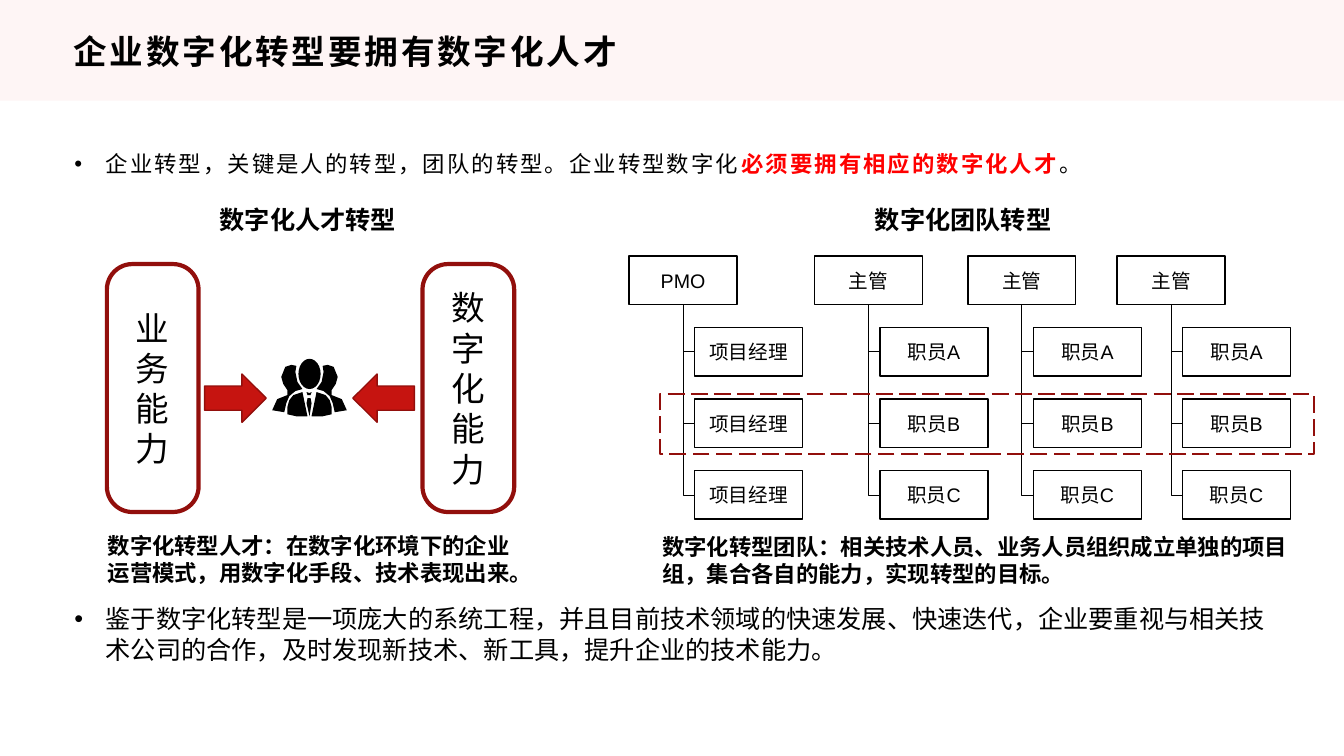
"""Builds a slide on the digital talent that a digital transformation needs."""
from pptx import Presentation
from pptx.dml.color import RGBColor
from pptx.enum.dml import MSO_LINE
from pptx.enum.shapes import MSO_CONNECTOR as Link, MSO_SHAPE as Kind
from pptx.enum.text import MSO_ANCHOR as Anchor, PP_ALIGN as Align
from pptx.oxml.ns import qn
from pptx.oxml.xmlchemy import OxmlElement as Element
from pptx.util import Inches, Pt

BLACK = RGBColor(0, 0, 0)
WHITE = RGBColor(255, 255, 255)
BLUSH = RGBColor(0xFE, 0xF5, 0xF5)
RED = RGBColor(0xFF, 0, 0)
CRIMSON = RGBColor(0xC6, 0x14, 0x10)
MAROON = RGBColor(0x92, 0x0F, 0x0C)


def add_box(kind, at, fill=None, line=None, width=1):
    box = slide.shapes.add_shape(kind, *map(Inches, at))
    box.shadow.inherit = False
    if fill is None:
        box.fill.background()
    else:
        box.fill.solid()
        box.fill.fore_color.rgb = fill
    if line is None:
        box.line.fill.background()
    else:
        box.line.color.rgb = line
        box.line.width = Pt(width)
    return box


def write(shape, parts, size, bold=None, align=Align.LEFT, bullet=False, gap=0):
    para = shape.text_frame.paragraphs[0]
    shape.text_frame.word_wrap = True
    para.alignment = align
    for part in parts:
        run = para.add_run()
        run.text = part
        if gap:
            run._r.get_or_add_rPr().set("spc", str(gap))
    if bullet:
        props = para._p.get_or_add_pPr()
        props.set("marL", str(Inches(0.31)))
        props.set("indent", str(Inches(-0.31)))
        for tag, key, value in (("a:buFont", "typeface", "Arial"), ("a:buChar", "char", "•")):
            mark = Element(tag)
            mark.set(key, value)
            props.append(mark)
    font = para.font
    font.name, font.size, font.bold = "Arial", Pt(size), bold
    font.color.rgb = BLACK
    return para


deck = Presentation()
deck.slide_width, deck.slide_height = Inches(13.33), Inches(7.5)
slide = deck.slides.add_slide(deck.slide_layouts[5])

title = slide.shapes.title
band = add_box(Kind.RECTANGLE, (0, 0, 13.33, 1), BLUSH)
title._element.addprevious(band._element)
title.left, title.top = Inches(0.63), Inches(0.27)
title.width, title.height = Inches(12.07), Inches(0.48)
title.text_frame.vertical_anchor = Anchor.MIDDLE
head = write(title, ["企业数字化转型要拥有数字化人才"], 24, True, gap=200)
head.font.name = "Noto Sans CJK JP"

lead = slide.shapes.add_textbox(*map(Inches, (0.64, 1.36, 12.05, 0.4)))
para = write(lead, ["企业转型，关键是人的转型，团队的转型。企业转型数字化",
                    "必须要拥有相应的数字化人才", "。"], 16, bullet=True, gap=150)
para.line_spacing = 1.3
para.space_after = Pt(10)
para.runs[1].font.bold = True
para.runs[1].font.color.rgb = RED

for at, text, size, bold in (
    ((2.08, 1.98, 1.97, 0.4), "数字化人才转型", 18, True),
    ((8.58, 1.98, 1.97, 0.4), "数字化团队转型", 18, True),
    ((0.97, 5.23, 4.33, 0.64),
     "数字化转型人才：在数字化环境下的企业运营模式，用数字化手段、技术表现出来。", 16, True),
    ((6.47, 5.24, 6.56, 0.64),
     "数字化转型团队：相关技术人员、业务人员组织成立单独的项目组，集合各自的能力，实现转型的目标。", 16, True),
    ((0.64, 5.94, 12.05, 0.71),
     "鉴于数字化转型是一项庞大的系统工程，并且目前技术领域的快速发展、快速迭代，"
     "企业要重视与相关技术公司的合作，及时发现新技术、新工具，提升企业的技术能力。", 18, None),
):
    note = slide.shapes.add_textbox(*map(Inches, at))
    write(note, [text], size, bold, bullet=not bold)

for left, skill in ((1.06, "业务能力"), (4.19, "数字化能力")):
    pill = add_box(Kind.ROUNDED_RECTANGLE, (left, 2.62, 0.91, 2.46), WHITE, MAROON, 3)
    pill.adjustments[0] = 0.278
    pill.text_frame.vertical_anchor = Anchor.MIDDLE
    write(pill, [skill], 24, align=Align.CENTER)

for left, flip in ((2.03, False), (3.5, True)):
    arrow = add_box(Kind.RIGHT_ARROW, (left, 3.71, 0.61, 0.48), CRIMSON, MAROON)
    if flip:
        arrow._element.spPr.find(qn("a:xfrm")).set("flipH", "1")

peer = [(2.93, 3.69), (2.94, 3.63), (2.89, 3.62), (2.83, 3.64), (2.79, 3.74), (2.81, 3.81),
        (2.85, 3.87), (2.85, 3.92), (2.75, 3.96), (2.7, 4.07), (2.82, 4.09), (2.84, 4),
        (2.87, 3.93), (2.93, 3.88), (3, 3.86), (2.95, 3.79)]
coat = [(3, 3.89), (2.91, 3.92), (2.87, 3.97), (2.85, 4.04), (2.85, 4.11), (2.94, 4.13),
        (3.05, 4.13)]
knot = [(3.04, 3.89), (3.05, 3.92), (3.08, 3.92), (3.09, 3.89), (3.07, 3.9)]
tie = [(3.05, 3.95), (3.04, 4), (3.07, 4.13), (3.09, 4), (3.08, 3.95)]
sides = [[(6.14 - x, y) for x, y in half] for half in (peer, coat)]
for shape in (peer, coat, *sides, knot, tie):
    dots = [(Inches(x), Inches(y)) for x, y in shape]
    pen = slide.shapes.build_freeform(*dots[0])
    pen.add_line_segments(dots[1:], close=True)
    part = pen.convert_to_shape()
    part.shadow.inherit = False
    part.fill.solid()
    part.fill.fore_color.rgb = BLACK
    part.line.fill.background()
add_box(Kind.OVAL, (2.96, 3.56, 0.22, 0.3), BLACK)

staff = ("职员A", "职员B", "职员C")
for left, chief, team in ((6.24, "PMO", ("项目经理",) * 3), (8.08, "主管", staff),
                          (9.6, "主管", staff), (11.08, "主管", staff)):
    boss = None
    for row, name in enumerate((chief, *team)):
        shift = 0.65 if row else 0
        card = add_box(Kind.RECTANGLE, (left + shift, 2.54 + 0.71 * row, 1.07, 0.48),
                       WHITE, BLACK)
        card.text_frame.vertical_anchor = Anchor.MIDDLE
        write(card, [name], 14, align=Align.CENTER)
        if boss is None:
            boss = card
            continue
        wire = slide.shapes.add_connector(Link.ELBOW, 0, 0, 0, 0)
        wire.begin_connect(boss, 2)
        wire.end_connect(card, 1)
        wide, tall = wire.width, wire.height
        wire.left += (wide - tall) // 2
        wire.top += (tall - wide) // 2
        wire.width, wire.height = tall, wide
        props = wire._element.spPr
        frame = props.find(qn("a:xfrm"))
        frame.set("rot", "16200000")
        frame.set("flipH", "1")
        props.find(qn("a:prstGeom")).set("prst", "bentConnector2")
        wire.line.color.rgb = BLACK
        wire.line.width = Pt(0.5)
        props.append(Element("a:effectLst"))

zone = add_box(Kind.RECTANGLE, (6.55, 3.91, 6.48, 0.59), None, MAROON, 1.5)
zone.line.dash_style = MSO_LINE.LONG_DASH

deck.save("out.pptx")
